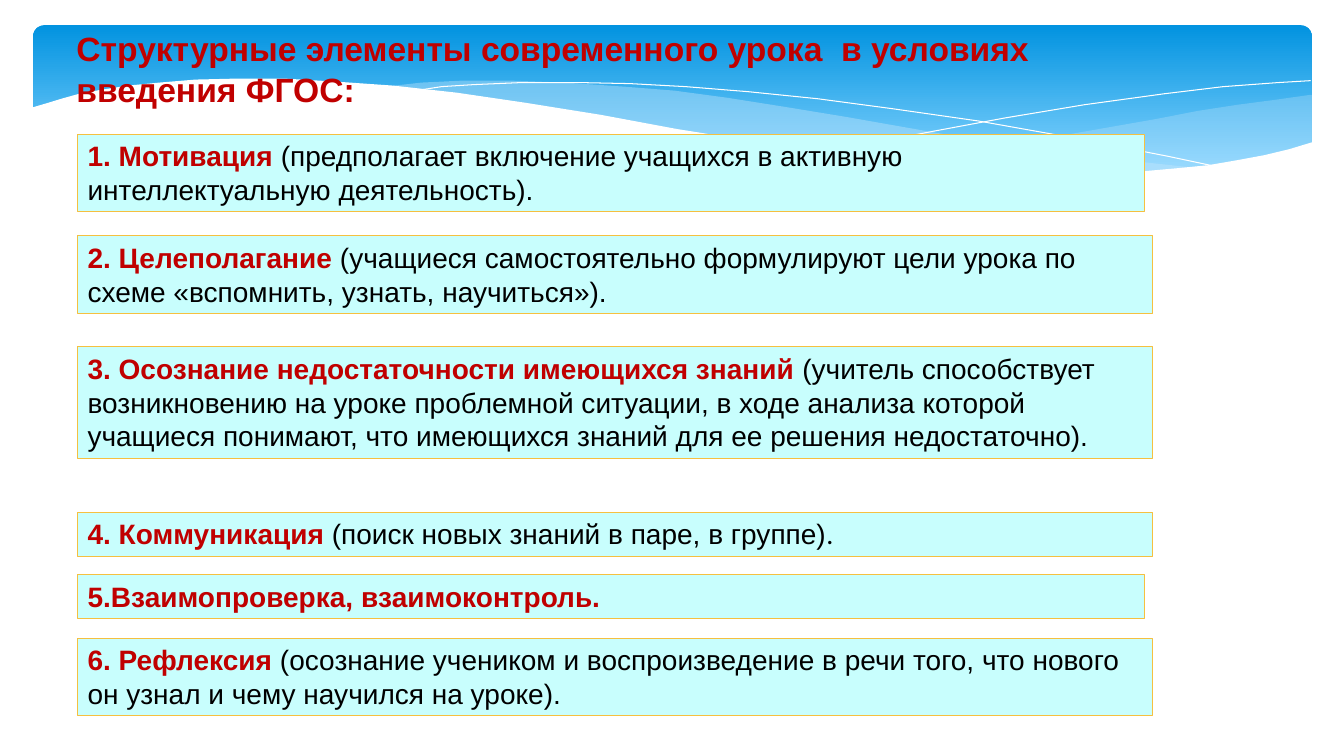
from lxml.etree import SubElement
from pptx import Presentation
from pptx.dml.color import RGBColor as Rgb
from pptx.enum.shapes import MSO_SHAPE as Shape
from pptx.enum.text import MSO_ANCHOR as Anchor, PP_ALIGN as Align
from pptx.oxml.ns import qn
from pptx.util import Pt

PX = 9144
COLORS = {
    "sky": "0293E0", "pale_sky": "83D3FE", "veil": "C6E7FC", "white": "FFFFFF",
    "card": "C8FEFD", "gold": "F5C040", "heading": "C00000", "body": "000000",
}

BACK_VEIL = [
    (1267, 69), (1232, 74), (1194, 79), (1155, 85), (1114, 93), (1040, 106),
    (972, 118), (908, 127), (849, 135), (907, 140), (960, 144), (1008, 146),
    (1052, 147), (1093, 146), (1130, 144), (1163, 141), (1195, 137),
    (1224, 131), (1268, 117), (1268, 69),
]
FRONT_VEIL = [
    (1157, 142), (1083, 134), (1001, 124), (908, 109), (806, 91), (745, 81),
    (688, 72), (636, 65), (586, 61), (527, 57), (473, 55), (426, 55),
    (385, 57), (349, 61), (398, 65), (450, 72), (506, 81), (566, 91),
    (673, 110), (769, 125), (834, 133), (893, 138), (948, 143), (997, 146),
    (1043, 148), (1085, 147), (1123, 145),
]
FALLING_LINE = [
    (379, 65), (405, 61), (437, 59), (483, 57), (544, 57), (592, 58),
    (647, 61), (709, 66), (778, 73), (853, 83), (937, 95), (1027, 111),
    (1125, 130), (1177, 141),
]
RISING_LINE = [
    (785, 126), (837, 116), (894, 105), (964, 92), (1042, 79), (1122, 68),
    (1180, 61), (1234, 57), (1267, 55),
]
WHITE_WAVE = [
    (1269, 116), (1246, 123), (1221, 129), (1194, 134), (1165, 139),
    (1134, 142), (1101, 145), (1064, 146), (1025, 146), (982, 145),
    (936, 142), (885, 137), (830, 131), (771, 124), (707, 114), (638, 103),
    (563, 89), (488, 77), (420, 67), (357, 60), (300, 56), (249, 53),
    (202, 53), (161, 54), (125, 57), (94, 60), (68, 64), (46, 68), (28, 73),
    (15, 77), (-2, 82), (-2, 199), (1270, 199), (1270, 115),
]

TITLE = "Структурные элементы современного урока  в условиях введения ФГОС:"
STAGES = [
    (133, 1058, 2, "1. Мотивация ",
     "(предполагает включение учащихся в активную интеллектуальную деятельность)."),
    (234, 1066, 2, "2. Целеполагание ",
     "(учащиеся самостоятельно формулируют цели урока по схеме "
     "«вспомнить, узнать, научиться»)."),
    (344, 1066, 3, "3. Осознание недостаточности имеющихся знаний ",
     "(учитель способствует возникновению на уроке проблемной ситуации, в ходе "
     "анализа которой учащиеся понимают, что имеющихся знаний для ее решения "
     "недостаточно)."),
    (508, 1066, 1, "4. Коммуникация", " (поиск новых знаний в паре, в группе)", "."),
    (570, 1058, 1, "5.Взаимопроверка, взаимоконтроль."),
    (633, 1066, 2, "6. Рефлексия ",
     "(осознание учеником и воспроизведение в речи того, что нового он узнал "
     "и чему научился на уроке)."),
]


def color(name):
    """Return the named colour."""
    return Rgb.from_string(COLORS[name])


def scaled(box):
    """Turn a px box into EMU."""
    return [length * PX for length in box]


def add_curve(page, box, points, fill=None, opacity=100):
    """Draw a filled wave, or an open white hairline when no fill is given."""
    left, top = box[:2]
    outline = [(left + x, top + y) for x, y in points]
    builder = page.shapes.build_freeform(*outline[0], scale=PX)
    builder.add_line_segments(outline[1:], close=fill is not None)
    curve = builder.convert_to_shape()
    curve.shadow.inherit = False
    if fill is None:
        curve.fill.background()
        curve.line.color.rgb = color("white")
        curve.line.width = Pt(0)
        return
    curve.fill.solid()
    curve.fill.fore_color.rgb = color(fill)
    curve.line.fill.background()
    if opacity < 100:
        tint = next(curve.fill._xPr.iter(qn("a:srgbClr")))
        SubElement(tint, qn("a:alpha"), val=str(opacity * 1000))


def add_header(page, box):
    """Place the blue gradient band and its waves."""
    band = page.shapes.add_shape(Shape.ROUNDED_RECTANGLE, *scaled(box))
    band.adjustments[0] = 0.07
    band.shadow.inherit = False
    band.line.fill.background()
    band.fill.gradient()
    band.fill.gradient_angle = 270
    stops = zip(band.fill.gradient_stops, ("sky", "pale_sky"), (0, 0.9))
    for stop, name, position in stops:
        stop.color.rgb = color(name)
        stop.position = position
    add_curve(page, box, BACK_VEIL, "veil", 29)
    add_curve(page, box, FRONT_VEIL, "veil", 40)
    add_curve(page, box, FALLING_LINE)
    add_curve(page, box, RISING_LINE)
    add_curve(page, box, WHITE_WAVE, "white")


def write(shape, spans):
    """Fill a shape with one paragraph of (text, size, colour, bold, font) spans."""
    frame = shape.text_frame
    frame.word_wrap = True
    frame.vertical_anchor = Anchor.TOP
    para = frame.paragraphs[0]
    para.alignment = Align.LEFT
    for text, size, name, bold, font in spans:
        span = para.add_run()
        span.text = text
        span.font.size = Pt(size)
        span.font.color.rgb = color(name)
        span.font.bold = bold
        span.font.name = font


def add_title(page, box):
    """Place the slide title."""
    title = page.shapes.add_textbox(*scaled(box))
    write(title, [(TITLE, 24, "heading", True, "Arial")])


def add_stage(page, box, texts):
    """Place one lesson stage: a bold heading, then its explanation."""
    card = page.shapes.add_shape(Shape.RECTANGLE, *scaled(box))
    card.shadow.inherit = False
    card.fill.solid()
    card.fill.fore_color.rgb = color("card")
    card.line.color.rgb = color("gold")
    card.line.width = Pt(0.75)
    styles = [
        (20, "heading", True, "Arial"),
        (20, "body", False, "Arial"),
        (20, "body", False, "Calibri"),
    ]
    write(card, [(text, *style) for text, style in zip(texts, styles)])


def main():
    """Build and save the deck."""
    deck = Presentation()
    deck.slide_width, deck.slide_height = scaled((1333, 750))
    page = deck.slides.add_slide(deck.slide_layouts[6])
    add_header(page, (33, 25, 1268, 156))
    add_title(page, (66, 23, 1091, 91))
    for top, width, lines, *texts in STAGES:
        height = 11 + 100 * lines // 3
        add_stage(page, (77, top, width, height), texts)
    deck.save("out.pptx")


if __name__ == "__main__":
    main()
